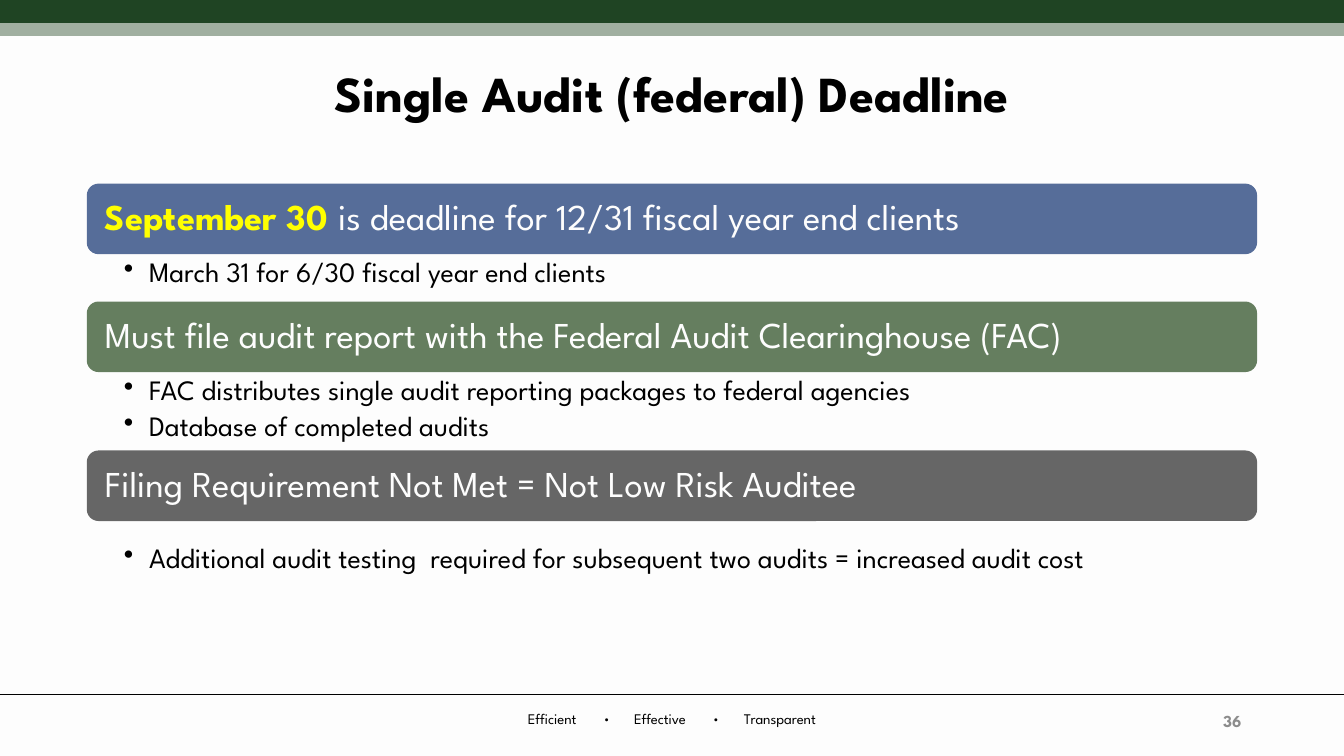
"""Build the slide on the single audit deadline."""
import pptx
import pptx.dml.color
import pptx.enum.shapes
import pptx.enum.text
import pptx.oxml
import pptx.oxml.ns
import pptx.util

Pt = pptx.util.Pt
RGBColor = pptx.dml.color.RGBColor
Align = pptx.enum.text.PP_ALIGN
Anchor = pptx.enum.text.MSO_ANCHOR
Shape = pptx.enum.shapes.MSO_SHAPE
Link = pptx.enum.shapes.MSO_CONNECTOR

FONT = "League Spartan"
PAPER = RGBColor(0xFD, 0xFD, 0xFD)
BLACK = RGBColor(0, 0, 0)
YELLOW = RGBColor(0xFF, 0xFF, 0)
BLUE = RGBColor(0x56, 0x6D, 0x99)
OLIVE = RGBColor(0x65, 0x7E, 0x5F)
GREY = RGBColor(0x66, 0x66, 0x66)
PALE = RGBColor(0x8C, 0x8C, 0x8C)
GREEN = RGBColor(0x1F, 0x44, 0x23)
SAGE = RGBColor(0xA0, 0xAF, 0xA0)

WIDE, HIGH = 960, 540
LEFT, SPAN, BAND = 62, 836, 50.4
TITLE = "Single Audit (federal) Deadline"
NUMBER = "36"
MOTTO = ["Efficient", "•", "Effective", "•", "Transparent"]
STOPS = [53.7, 75.8, 131.8, 154.3]
RULES = [(7.2, GREEN, 18), (20.9, SAGE, 9), (496, BLACK, 0.5)]
TOPICS = [
    (131.2, BLUE,
     [("September 30 ", YELLOW, True),
      ("is deadline for 12/31 fiscal year end clients", PAPER, False)],
     0, ["March 31 for 6/30 fiscal year end clients"]),
    (215.4, OLIVE,
     [("Must file audit report with the Federal Audit Clearinghouse (FAC)",
       PAPER, False)],
     0, ["FAC distributes single audit reporting packages to federal agencies",
         "Database of completed audits"]),
    (321.8, GREY,
     [("Filing Requirement Not Met = Not Low Risk Auditee", PAPER, False)],
     13.6, ["Additional audit testing  required for subsequent two audits"
            " = increased audit cost"]),
]


def add_run(para, text, size, color, bold=False):
    run = para.add_run()
    run.text = text
    font = run.font
    font.name, font.size, font.bold = FONT, Pt(size), bold
    font.color.rgb = color


def set_frame(shape, insets, anchor):
    frame = shape.text_frame
    frame.word_wrap = True
    frame.vertical_anchor = anchor
    (frame.margin_left, frame.margin_top,
     frame.margin_right, frame.margin_bottom) = map(Pt, insets)
    return frame


def add_box(slide, area, insets=(7.2, 3.6, 7.2, 3.6), anchor=Anchor.MIDDLE):
    return set_frame(slide.shapes.add_textbox(*map(Pt, area)), insets, anchor)


def add_rule(slide, y, color, width):
    rule = slide.shapes.add_connector(
        Link.STRAIGHT, Pt(0), Pt(y), Pt(WIDE), Pt(y))
    rule.line.color.rgb, rule.line.width = color, Pt(width)
    pptx.oxml.ns.qn("a:effectLst")
    rule._element.spPr.append(make("effectLst"))


def make(tag, **attrs):
    space = pptx.oxml.ns.nsdecls("a")
    node = pptx.oxml.parse_xml(f"<a:{tag} {space}/>")
    for key, value in attrs.items():
        node.set(key, str(value))
    return node


def add_band(slide, top, color, runs):
    band = slide.shapes.add_shape(
        Shape.ROUNDED_RECTANGLE, Pt(LEFT), Pt(top), Pt(SPAN), Pt(BAND))
    band.shadow.inherit = False
    band.fill.solid()
    band.fill.fore_color.rgb = color
    band.line.fill.background()
    para = set_frame(band, (10.5, 8, 8, 8), Anchor.MIDDLE).paragraphs[0]
    para.alignment, para.line_spacing = Align.LEFT, 0.9
    for text, tint, bold in runs:
        add_run(para, text, 26, tint, bold)


def add_list(slide, top, items):
    area = (LEFT, top, SPAN, 8 + 25.6 * len(items))
    frame = add_box(slide, area, (26.5, 2.9, 14.4, 2.9), Anchor.TOP)
    for i, item in enumerate(items):
        para = frame.add_paragraph() if i else frame.paragraphs[0]
        para.line_spacing, para.space_after = 0.9, Pt(4)
        props = para._p.get_or_add_pPr()
        props.set("marL", str(Pt(18)))
        props.set("indent", str(Pt(-18)))
        props.append(make("buChar", char="•"))
        add_run(para, item, 20, BLACK)


def add_motto(slide):
    para = add_box(slide, (377.1, 503.3, 230, 20.2),
                   (0, 3.6, 0, 3.6), Anchor.TOP).paragraphs[0]
    tabs = make("tabLst")
    for stop in STOPS:
        tabs.append(make("tab", pos=Pt(stop), algn="l"))
    para._p.get_or_add_pPr().append(tabs)
    add_run(para, "\t".join(MOTTO), 10.5, BLACK)


def main():
    deck = pptx.Presentation()
    deck.slide_width, deck.slide_height = Pt(WIDE), Pt(HIGH)
    slide = deck.slides.add_slide(deck.slide_layouts[6])
    slide.background.fill.solid()
    slide.background.fill.fore_color.rgb = PAPER
    for rule in RULES:
        add_rule(slide, *rule)
    add_motto(slide)
    title = add_box(slide, (66, 28.8, 828, 79.2)).paragraphs[0]
    title.alignment, title.line_spacing = Align.CENTER, 0.9
    add_run(title, TITLE, 36, BLACK, True)
    number = add_box(slide, (678, 500.5, 216, 28.8)).paragraphs[0]
    number.alignment = Align.RIGHT
    add_run(number, NUMBER, 12, PALE, True)
    for top, color, runs, gap, items in TOPICS:
        add_band(slide, top, color, runs)
        add_list(slide, top + BAND + gap, items)
    deck.save("out.pptx")


if __name__ == "__main__":
    main()
